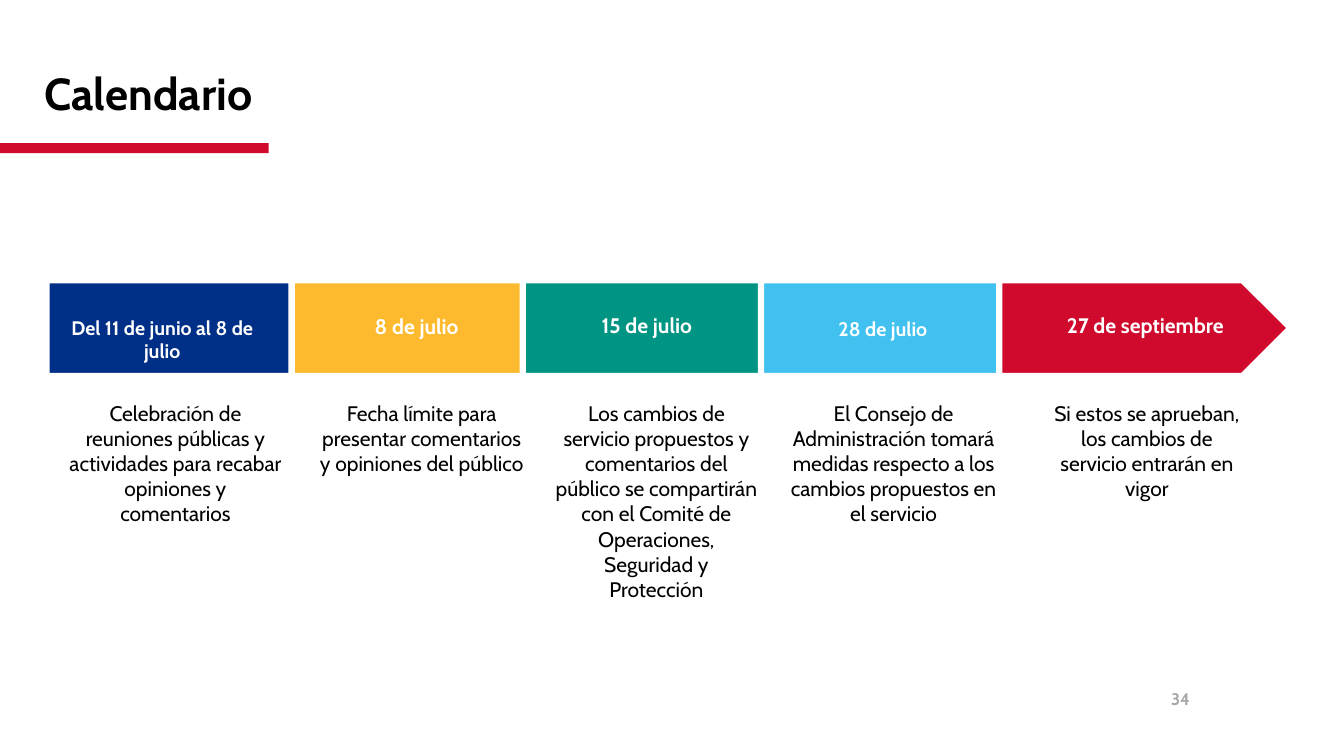
from dataclasses import dataclass

from pptx import Presentation
from pptx.dml.color import RGBColor
from pptx.enum.shapes import MSO_SHAPE
from pptx.enum.text import MSO_ANCHOR, MSO_AUTO_SIZE, PP_ALIGN
from pptx.util import Inches, Pt

RECTANGLE, PENTAGON = MSO_SHAPE.RECTANGLE, MSO_SHAPE.PENTAGON
LEFT, CENTER, RIGHT = PP_ALIGN.LEFT, PP_ALIGN.CENTER, PP_ALIGN.RIGHT
TOP, MIDDLE = MSO_ANCHOR.TOP, MSO_ANCHOR.MIDDLE
NO_FIT = MSO_AUTO_SIZE.NONE
TITLE_ONLY = 5

SLIDE_W, SLIDE_H = 13.33, 7.5
FONT = "Cabin"
COLORS = {
    "navy": "002F87", "amber": "FDBA2F", "green": "009483",
    "sky": "41C1EF", "red": "CF0A2C", "white": "FFFFFF",
    "black": "000000", "gray": "A6A6A6",
}

# Timeline grid, in inches
PITCH = 2.3625
BAR_W, BAR_H = 2.89, 0.95
LABEL_W, LABEL_H = 2.3, 0.35
DETAIL_TOP = 1.14


@dataclass
class Milestone:
    color: str
    date: str
    detail: str
    date_x: float
    date_y: float
    detail_x: float
    detail_w: float
    date_size: int = 15
    inset: float = 0


# Offsets are measured from the left end and top of each grid column
MILESTONES = [
    Milestone("navy", "Del 11 de junio al 8 de julio",
              "Celebración de reuniones públicas y actividades para recabar "
              "opiniones y comentarios", 0, 0.3, 0.13, 2.3, date_size=14),
    Milestone("amber", "8 de julio",
              "Fecha límite para presentar comentarios y opiniones del público",
              0.16, 0.28, 0.21, 2.3, inset=0.07),
    Milestone("green", "15 de julio",
              "Los cambios de servicio propuestos y comentarios del público se "
              "compartirán con el Comité de Operaciones, Seguridad y Protección",
              0.08, 0.27, 0.22, 2.21),
    Milestone("sky", "28 de julio",
              "El Consejo de Administración tomará medidas respecto a los\n"
              "cambios propuestos en el servicio",
              0.06, 0.31, 0.19, 2.25, date_size=14),
    Milestone("red", "27 de septiembre",
              "Si estos se aprueban, los cambios de servicio entrarán en vigor",
              0.3, 0.27, 0.39, 2.15),
]


def rgb(name):
    return RGBColor.from_string(COLORS[name])


def write(holder, text, size=15, color="black", bold=False, align=CENTER,
          anchor=TOP, line_spacing=None):
    frame = holder.text_frame
    frame.text = text
    frame.word_wrap = True
    frame.auto_size = NO_FIT
    frame.vertical_anchor = anchor
    for paragraph in frame.paragraphs:
        paragraph.alignment = align
        paragraph.line_spacing = line_spacing
        font = paragraph.font
        font.name, font.size, font.bold = FONT, Pt(size), bold
        font.color.rgb = rgb(color)


def add_text(slide, box, text, **style):
    write(slide.shapes.add_textbox(*map(Inches, box)), text, **style)


def add_block(slide, kind, box, fill, outline=None):
    block = slide.shapes.add_shape(kind, *map(Inches, box))
    block.shadow.inherit = False
    block.fill.solid()
    block.fill.fore_color.rgb = rgb(fill)
    if outline:
        block.line.color.rgb = rgb(outline)
        block.line.width = Pt(4.5)
    else:
        block.line.fill.background()


def add_heading(slide, box, text):
    x, y, w, h = box
    # Accent rule under the title, running in from the slide edge
    add_block(slide, RECTANGLE, (0, y + 1.19, SLIDE_W * 0.2, 0.1), "red")
    title = slide.shapes.title
    title.left, title.top, title.width, title.height = map(Inches, (x, y, w, h))
    write(title, text, size=32, bold=True, align=LEFT, anchor=MIDDLE,
          line_spacing=0.9)


def add_timeline(slide, box, milestones):
    left, top, _, height = box
    for column, step in enumerate(milestones):
        x = left + column * PITCH
        # Each bar covers the point of the one before it
        add_block(slide, PENTAGON,
                  (x + step.inset, top, BAR_W - step.inset, BAR_H),
                  step.color, outline="white")
        add_text(slide, (x + step.date_x, top + step.date_y, LABEL_W, LABEL_H),
                 step.date, size=step.date_size, color="white", bold=True)
        add_text(slide, (x + step.detail_x, top + DETAIL_TOP, step.detail_w,
                         height - DETAIL_TOP), step.detail)


def add_page_number(slide, box, number):
    add_text(slide, box, number, size=12, color="gray", bold=True,
             align=RIGHT, anchor=MIDDLE)


def main():
    deck = Presentation()
    deck.slide_width, deck.slide_height = Inches(SLIDE_W), Inches(SLIDE_H)
    slide = deck.slides.add_slide(deck.slide_layouts[TITLE_ONLY])
    add_heading(slide, (0.34, 0.23, 11.5, 1.45), "Calendario")
    add_timeline(slide, (0.46, 2.78, 12.34, 3.11), MILESTONES)
    add_page_number(slide, (8.9, 6.73, 3, 0.4), "34")
    deck.save("out.pptx")


if __name__ == "__main__":
    main()
